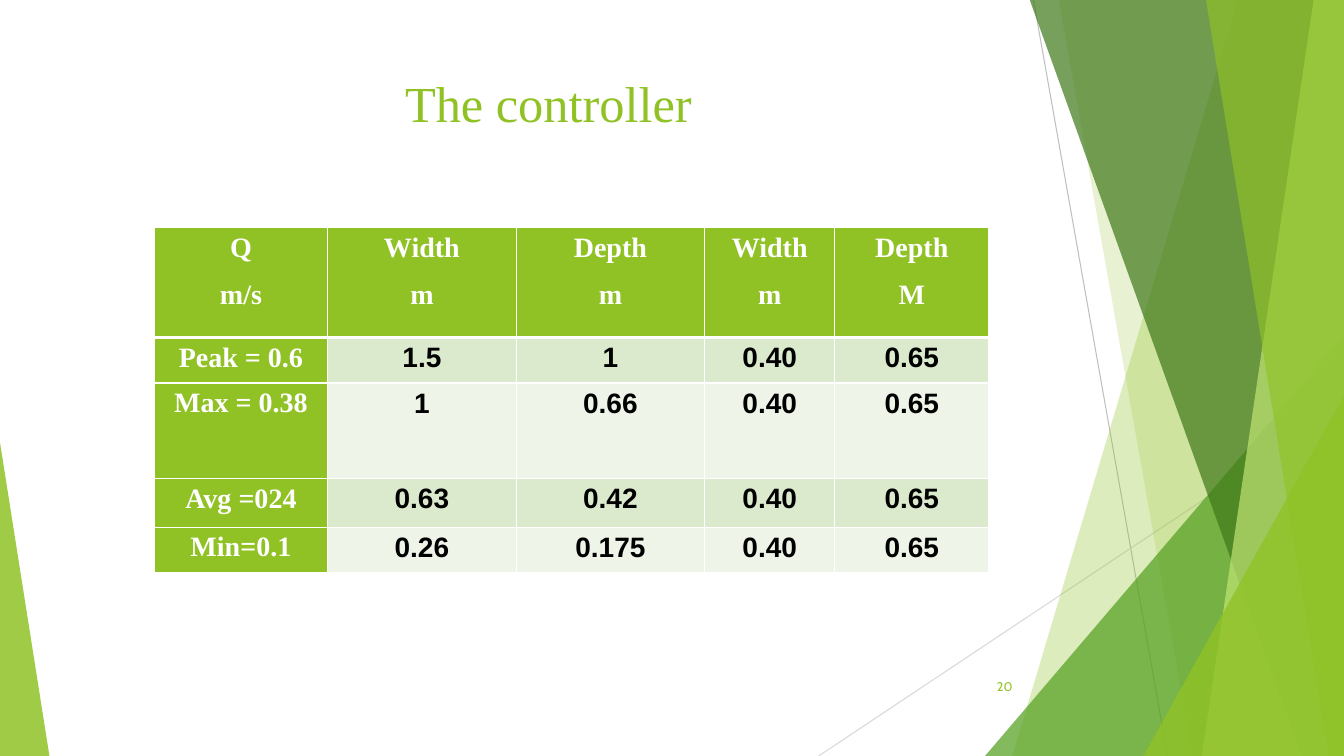
from dataclasses import dataclass
from typing import Optional

from lxml.etree import SubElement
from pptx import Presentation
from pptx.dml.color import RGBColor
from pptx.enum.shapes import MSO_CONNECTOR, MSO_SHAPE
from pptx.enum.text import MSO_ANCHOR, PP_ALIGN
from pptx.oxml.ns import qn
from pptx.util import Inches, Pt

LIME = RGBColor(0x90, 0xC2, 0x26)
GREEN = RGBColor(0x54, 0xA0, 0x21)
FOREST = RGBColor(0x3F, 0x78, 0x19)
PALE_LIME = RGBColor(0xC0, 0xE4, 0x74)
BAND_DARK = RGBColor(0xDB, 0xE9, 0xCD)
BAND_LIGHT = RGBColor(0xEE, 0xF4, 0xE8)
GRAY = RGBColor(0xBF, 0xBF, 0xBF)
LIGHT_GRAY = RGBColor(0xD9, 0xD9, 0xD9)
WHITE = RGBColor(0xFF, 0xFF, 0xFF)
BLACK = RGBColor(0, 0, 0)

SERIF = "Times New Roman"
WIDTH, HEIGHT, TOP = 13.33, 7.5, -0.01


@dataclass
class Ray:
    start: tuple[float, float]
    end: tuple[float, float]
    color: RGBColor


@dataclass
class Blade:
    top_x: float
    bottom_x: float
    color: RGBColor
    opacity: int


@dataclass
class Corner:
    left: float
    top: float
    width: float
    apex: float
    color: RGBColor
    opacity: int


RAYS = [
    Ray((10.25, 0), (11.58, HEIGHT), GRAY),
    Ray((WIDTH, 4.03), (8.12, HEIGHT), LIGHT_GRAY),
]
FACETS = [
    Blade(12.28, 10.04, LIME, 30),
    Blade(10.5, 11.83, LIME, 20),
    Corner(9.77, 3.33, 3.56, 1, GREEN, 72),
    Blade(10.21, 12.91, FOREST, 70),
    Blade(13.03, 11.92, PALE_LIME, 70),
    Blade(11.96, 13.18, LIME, 65),
    Corner(11.34, 3.93, 1.99, 1, LIME, 80),
    Corner(0, 4.39, 0.49, 0, LIME, 85),
]
COLUMNS = [1.72, 1.87, 1.87, 1.29, 1.53]
ROWS = [1.09, 0.45, 0.95, 0.48, 0.45]
CELLS = [
    ["Q\nm/s", "Width\nm", "Depth\nm", "Width\nm", "Depth\nM"],
    ["Peak = 0.6", "1.5", "1", "0.40", "0.65"],
    ["Max = 0.38", "1", "0.66", "0.40", "0.65"],
    ["Avg =024", "0.63", "0.42", "0.40", "0.65"],
    ["Min=0.1", "0.26", "0.175", "0.40", "0.65"],
]


def write(tf, text: str, *, size: float, color: RGBColor, font: str = SERIF,
          cs_font: Optional[str] = None, bold: bool = False,
          align=PP_ALIGN.CENTER, spacing: Optional[float] = None,
          after: Optional[float] = None) -> None:
    for i, line in enumerate(text.split("\n")):
        p = tf.add_paragraph() if i else tf.paragraphs[0]
        p.alignment = align
        p._p.get_or_add_pPr().set("rtl", "1")
        if spacing:
            p.line_spacing = spacing
        if after:
            p.space_after = Pt(after)
        r = p.add_run()
        r.text = line
        r.font.size = Pt(size)
        r.font.bold = bold
        r.font.name = font
        r.font.color.rgb = color
        SubElement(r._r.get_or_add_rPr(), qn("a:cs"), typeface=cs_font or font)


def add_text(s, box: tuple, text: str, *, anchor=MSO_ANCHOR.TOP, **fmt) -> None:
    tf = s.shapes.add_textbox(*map(Inches, box)).text_frame
    tf.word_wrap = True
    tf.vertical_anchor = anchor
    write(tf, text, **fmt)


def add_ray(s, ray: Ray) -> None:
    line = s.shapes.add_connector(MSO_CONNECTOR.STRAIGHT,
                                  *map(Inches, ray.start + ray.end))
    line.line.color.rgb = ray.color
    line.line.width = Pt(0.75)
    SubElement(line._element.spPr, qn("a:effectLst"))


def add_facet(s, facet: Blade | Corner) -> None:
    if isinstance(facet, Blade):
        points = [(Inches(x), Inches(y)) for x, y in (
            (facet.top_x, TOP), (WIDTH, TOP),
            (WIDTH, HEIGHT), (facet.bottom_x, HEIGHT))]
        builder = s.shapes.build_freeform(*points[0])
        builder.add_line_segments(points[1:], close=True)
        sp = builder.convert_to_shape()
    else:
        sp = s.shapes.add_shape(
            MSO_SHAPE.ISOSCELES_TRIANGLE, Inches(facet.left), Inches(facet.top),
            Inches(facet.width), Inches(HEIGHT - facet.top))
        sp.adjustments[0] = facet.apex
    sp.shadow.inherit = False
    sp.line.fill.background()
    sp.fill.solid()
    sp.fill.fore_color.rgb = facet.color
    color = sp._element.spPr.find(qn("a:solidFill"))[0]
    SubElement(color, qn("a:alpha"), val=str(facet.opacity * 1000))


def set_borders(cell, widths: dict[str, float]) -> None:
    tcPr = cell._tc.get_or_add_tcPr()
    for i, (side, width) in enumerate(widths.items()):
        ln = tcPr.makeelement(qn(f"a:ln{side}"), {"w": str(Pt(width))})
        fill = SubElement(ln, qn("a:solidFill"))
        SubElement(fill, qn("a:srgbClr"), val=str(WHITE))
        tcPr.insert(i, ln)


def add_size_table(s) -> None:
    table = s.shapes.add_table(
        len(ROWS), len(COLUMNS), Inches(1.53), Inches(2.26),
        Inches(sum(COLUMNS)), Inches(sum(ROWS))).table
    for column, width in zip(table.columns, COLUMNS):
        column.width = Inches(width)
    for i, (row, height) in enumerate(zip(table.rows, ROWS)):
        row.height = Inches(height)
        for j, cell in enumerate(row.cells):
            heading = i == 0 or j == 0
            cell.margin_left = cell.margin_right = Inches(0.07)
            cell.margin_top = cell.margin_bottom = 0
            cell.fill.solid()
            band = BAND_DARK if i % 2 else BAND_LIGHT
            cell.fill.fore_color.rgb = LIME if heading else band
            set_borders(cell, {"L": 1, "R": 1, "T": 3 if i == 1 else 1,
                               "B": 3 if i == 0 else 1})
            write(cell.text_frame, CELLS[i][j], size=20, bold=True,
                  color=WHITE if heading else BLACK,
                  cs_font=SERIF if heading else "Arial",
                  spacing=1.15, after=8)


def main() -> None:
    prs = Presentation()
    prs.slide_width, prs.slide_height = Inches(WIDTH), Inches(HEIGHT)
    s = prs.slides.add_slide(prs.slide_layouts[6])
    for ray in RAYS:
        add_ray(s, ray)
    for facet in FACETS:
        add_facet(s, facet)
    add_text(s, (0.74, 0.67, 9.4, 1.44), "The controller", size=36, color=LIME)
    add_size_table(s)
    add_text(s, (9.39, 6.61, 0.75, 0.4), "20", size=9, color=LIME, font="Cabin",
             align=PP_ALIGN.RIGHT, anchor=MSO_ANCHOR.MIDDLE)
    prs.save("out.pptx")


if __name__ == "__main__":
    main()
